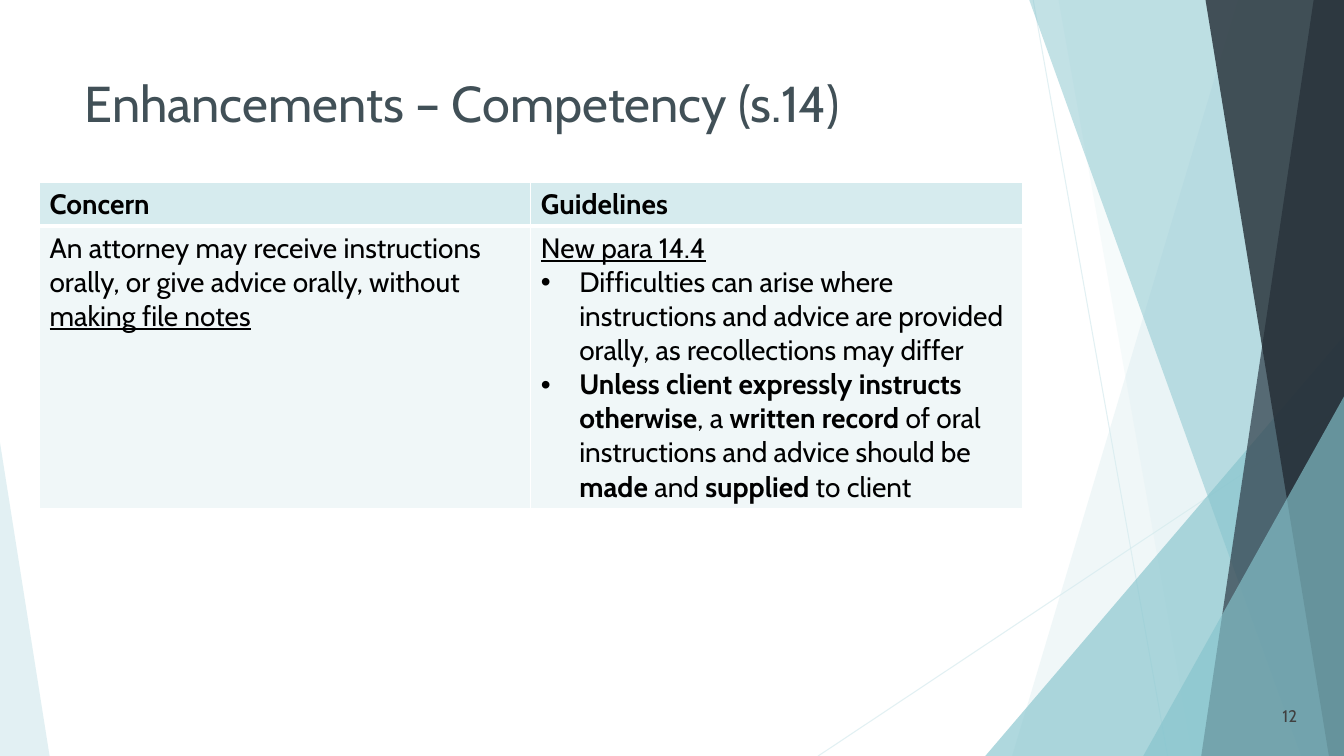
from lxml import etree
from pptx import Presentation
from pptx import util as u
from pptx.dml.color import RGBColor
from pptx.enum import shapes, text
from pptx.oxml import ns

COLUMNS, ROWS = 160, 90
PALE = RGBColor(0xD6, 0xEB, 0xEE)
PALEST = RGBColor(0xF0, 0xF7, 0xF8)
TEAL = RGBColor(0x86, 0xC4, 0xCD)
SLATE = RGBColor(0x2E, 0x3B, 0x46)
NAVY = RGBColor(0x23, 0x2C, 0x34)
TITLE_GREY = RGBColor(0x41, 0x50, 0x57)
NUMBER_GREY = RGBColor(0x40, 0x40, 0x40)
BLACK = RGBColor(0, 0, 0)
WHITE = RGBColor(0xFF, 0xFF, 0xFF)


def add_xml(parent, tag, **attributes):
    return etree.SubElement(parent, ns.qn(tag), attributes)


def set_opacity(element, percent):
    for color in element.iter(ns.qn("a:srgbClr")):
        add_xml(color, "a:alpha", val=str(percent * 1000))


class SlideBuilder:
    font_name = "Cabin"

    def __init__(self, deck):
        self.slide = deck.slides.add_slide(deck.slide_layouts[6])
        self.shapes = self.slide.shapes
        self.column = deck.slide_width / COLUMNS
        self.row = deck.slide_height / ROWS

    def place(self, x, y):
        return round(x * self.column), round(y * self.row)

    def box(self, left, top, width, height):
        return *self.place(left, top), *self.place(width, height)

    def fill(self, shape, color, opacity):
        shape.shadow.inherit = False
        shape.fill.solid()
        shape.fill.fore_color.rgb = color
        shape.line.fill.background()
        set_opacity(shape.fill._xPr, opacity)

    def hairline(self, start, end):
        line = self.shapes.add_connector(
            shapes.MSO_CONNECTOR.STRAIGHT, *self.place(*start), *self.place(*end))
        line.line.color.rgb = PALE
        line.line.width = u.Pt(0.75)
        set_opacity(line.line._ln, 70)
        add_xml(line._element.spPr, "a:effectLst")

    def band(self, top_x, bottom_x, color, opacity):
        """Fill from a slanted left edge to the right side of the slide."""
        outline = self.shapes.build_freeform(*self.place(top_x, -0.1))
        corners = [(COLUMNS, -0.1), (COLUMNS, ROWS), (bottom_x, ROWS)]
        outline.add_line_segments([self.place(*corner) for corner in corners])
        self.fill(outline.convert_to_shape(), color, opacity)

    def triangle(self, left, top, width, apex, color, opacity):
        corner = self.shapes.add_shape(
            shapes.MSO_SHAPE.ISOSCELES_TRIANGLE, *self.box(left, top, width, ROWS - top))
        corner.adjustments[0] = apex
        self.fill(corner, color, opacity)

    def style(self, paragraph, size, color, bold=None, underline=None):
        font = paragraph.font
        font.name, font.size = self.font_name, u.Pt(size)
        font.color.rgb = color
        font.bold, font.underline = bold, underline

    def label(self, place, words, size, color, align, anchor):
        frame = self.shapes.add_textbox(*self.box(*place)).text_frame
        frame.word_wrap = True
        frame.vertical_anchor = anchor
        frame.text = words
        frame.paragraphs[0].alignment = align
        self.style(frame.paragraphs[0], size, color)

    def table(self, left, top, widths, heights, content):
        place = self.box(left, top, sum(widths), sum(heights))
        grid = self.shapes.add_table(len(heights), len(widths), *place).table
        for column, width in zip(grid.columns, widths):
            column.width = round(width * self.column)
        for row, height in zip(grid.rows, heights):
            row.height = round(height * self.row)
        for r, row_content in enumerate(content):
            for c, paragraphs in enumerate(row_content):
                self.cell(grid.cell(r, c), paragraphs, header=r == 0)

    def cell(self, cell, paragraphs, header):
        # Borders come before the fill in the cell's properties
        properties = cell._tc.get_or_add_tcPr()
        thick_side = "a:lnB" if header else "a:lnT"
        for side in ("a:lnL", "a:lnR", "a:lnT", "a:lnB"):
            width = u.Pt(3 if side == thick_side else 1)
            border = add_xml(properties, side, w=str(width))
            add_xml(add_xml(border, "a:solidFill"), "a:srgbClr", val=str(WHITE))
        cell.fill.solid()
        cell.fill.fore_color.rgb = PALE if header else PALEST

        frame = cell.text_frame
        for i, (bullet, runs) in enumerate(paragraphs):
            paragraph = frame.add_paragraph() if i else frame.paragraphs[0]
            if bullet:
                indent = u.Inches(0.38)
                layout = paragraph._p.get_or_add_pPr()
                layout.set("marL", str(indent))
                layout.set("indent", str(-indent))
                add_xml(layout, "a:buFont", typeface="Arial")
                add_xml(layout, "a:buChar", char="•")
            self.style(paragraph, 20, BLACK, bold=header, underline=False)
            for words, emphasis in runs:
                run = paragraph.add_run()
                run.text = words
                if emphasis == "bold":
                    run.font.bold = True
                elif emphasis == "underline":
                    run.font.underline = True


CONTENT = [
    [[(False, [("Concern", "bold")])], [(False, [("Guidelines", "bold")])]],
    [
        [(False, [
            ("An attorney may receive instructions orally, or give advice orally, without ", None),
            ("making file notes", "underline")])],
        [
            (False, [("New para 14.4", "underline")]),
            (True, [("Difficulties can arise where instructions and advice are provided "
                     "orally, as recollections may differ", None)]),
            (True, [
                ("Unless client expressly instructs otherwise", "bold"), (", a ", None),
                ("written record", "bold"),
                (" of oral instructions and advice should be ", None),
                ("made", "bold"), (" and ", None),
                ("supplied", "bold"), (" to client", None)]),
        ],
    ],
]


def main():
    deck = Presentation()
    deck.slide_width, deck.slide_height = u.Inches(13.33), u.Inches(7.5)
    page = SlideBuilder(deck)

    # Faceted backdrop, from back to front
    page.hairline((123, 0), (139, ROWS))
    page.hairline((COLUMNS, 48.4), (97.4, ROWS))
    page.band(147.4, 120.5, PALE, 36)
    page.band(126, 142, PALE, 20)
    page.triangle(117.3, 40, 42.7, 1, TEAL, 66)
    page.band(122.5, 154.9, TEAL, 50)
    page.band(156.4, 143, SLATE, 70)
    page.band(143.5, 158.2, NAVY, 80)
    page.triangle(136.1, 47.2, 23.9, 1, TEAL, 66)
    page.triangle(0, 52.7, 5.9, 0, PALE, 70)

    # Title, concern and guidelines, page number
    page.label((8.9, 8, 112.8, 11.9), "Enhancements – Competency (s.14)", 36, TITLE_GREY,
               text.PP_ALIGN.LEFT, text.MSO_ANCHOR.TOP)
    page.table(4.7, 21.7, (58.5, 58.5), (4.9, 33.7), CONTENT)
    page.label((146.6, 82.8, 9, 4.8), "12", 12, NUMBER_GREY,
               text.PP_ALIGN.RIGHT, text.MSO_ANCHOR.MIDDLE)

    deck.save("out.pptx")


if __name__ == "__main__":
    main()
